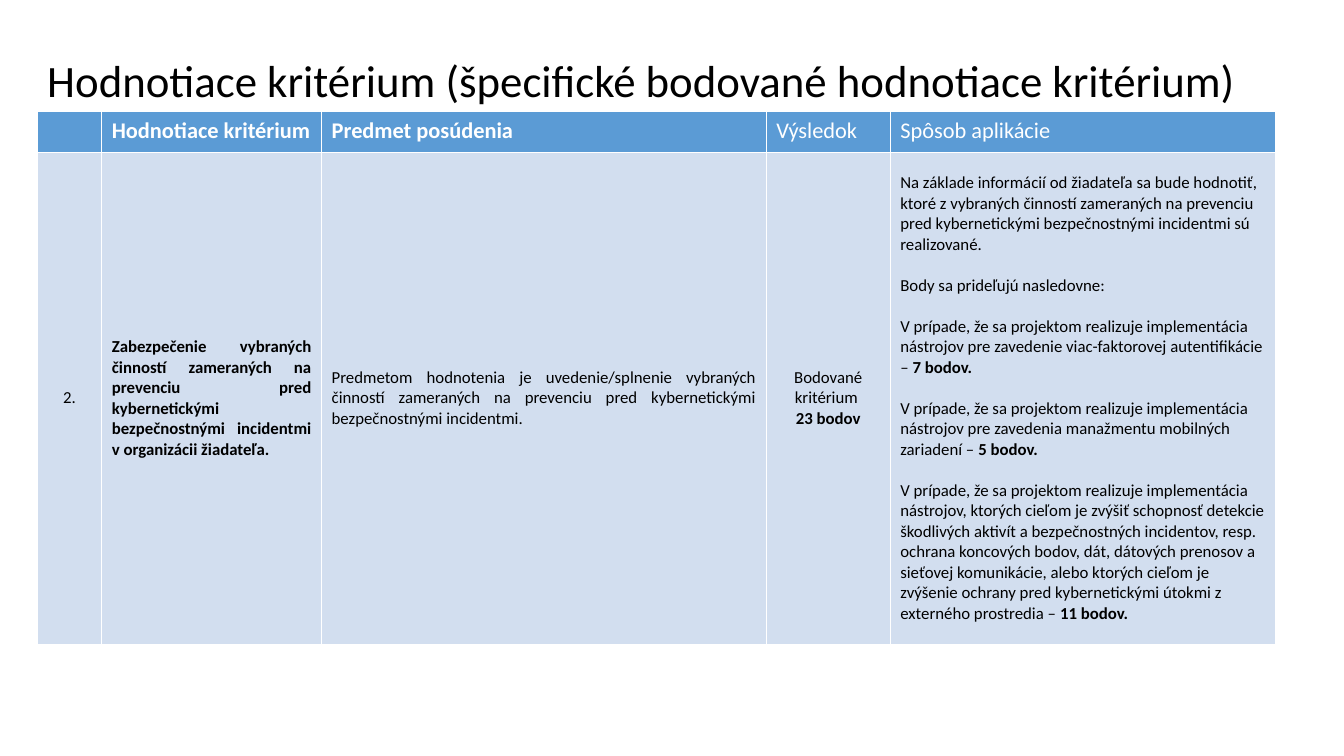
import pptx
import pptx.util
import pptx.dml.color
import pptx.enum.text
import pptx.oxml
import pptx.oxml.ns
from dataclasses import dataclass

Inches = pptx.util.Inches
ALIGN = pptx.enum.text.PP_ALIGN
ANCHOR = pptx.enum.text.MSO_ANCHOR


@dataclass(frozen=True)
class Theme:
    font: str = "Calibri"
    dark: str = "000000"
    light: str = "FFFFFF"
    header_fill: str = "5B9BD5"
    body_fill: str = "D2DEEF"
    title_size: float = 32
    header_size: float = 16
    body_size: float = 12
    paragraph_gap: float = 14.65
    border: float = 1


theme = Theme()


def write_text(frame, paragraphs, size, color, align=ALIGN.LEFT, gap=0, spacing=None):
    for index, spans in enumerate(paragraphs):
        para = frame.paragraphs[0] if index == 0 else frame.add_paragraph()
        para.alignment = align
        para.line_spacing = spacing
        para.space_before = pptx.util.Pt(gap if index else 0)
        for text, bold in spans:
            span = para.add_run()
            span.text = text
            span.font.name = theme.font
            span.font.size = pptx.util.Pt(size)
            span.font.bold = bold
            span.font.color.rgb = pptx.dml.color.RGBColor.from_string(color)


def style_cell(cell, fill):
    properties = cell._tc.get_or_add_tcPr()
    namespace = pptx.oxml.ns.nsdecls("a")
    for side in ("lnL", "lnR", "lnT", "lnB"):
        properties.append(pptx.oxml.parse_xml(
            f'<a:{side} {namespace} w="{pptx.util.Pt(theme.border)}"><a:solidFill>'
            f'<a:srgbClr val="{theme.light}"/></a:solidFill></a:{side}>'))
    cell.fill.solid()
    cell.fill.fore_color.rgb = pptx.dml.color.RGBColor.from_string(fill)


deck = pptx.Presentation()
deck.slide_width = Inches(13.33)
deck.slide_height = Inches(7.5)
page = deck.slides.add_slide(deck.slide_layouts[6])

title_box = page.shapes.add_textbox(Inches(0.37), Inches(0.29), Inches(12.29), Inches(0.82))
title_box.text_frame.word_wrap = True
title_box.text_frame.vertical_anchor = ANCHOR.BOTTOM
write_text(title_box.text_frame,
           [[("Hodnotiace kritérium (špecifické bodované hodnotiace kritérium)", False)]],
           theme.title_size, theme.dark, spacing=0.9)

column_widths = [0.64, 2.18, 4.41, 1.23, 3.82]
row_heights = [0.4, 4.88]
headers = [
    ("", False),
    ("Hodnotiace kritérium", True),
    ("Predmet posúdenia", True),
    ("Výsledok", False),
    ("Spôsob aplikácie", False),
]
scoring = [
    [("Na základe informácií od žiadateľa sa bude hodnotiť, ktoré z vybraných činností "
      "zameraných na prevenciu pred kybernetickými bezpečnostnými incidentmi sú realizované.", False)],
    [("Body sa prideľujú nasledovne:", False)],
    [("V prípade, že sa projektom realizuje implementácia nástrojov pre zavedenie "
      "viac-faktorovej autentifikácie – ", False), ("7 bodov.", True)],
    [("V prípade, že sa projektom realizuje implementácia nástrojov pre zavedenia "
      "manažmentu mobilných zariadení – ", False), ("5 bodov.", True)],
    [("V prípade, že sa projektom realizuje implementácia nástrojov, ktorých cieľom je zvýšiť "
      "schopnosť detekcie škodlivých aktivít a bezpečnostných incidentov, resp. ochrana koncových "
      "bodov, dát, dátových prenosov a sieťovej komunikácie, alebo ktorých cieľom je zvýšenie "
      "ochrany pred kybernetickými útokmi z externého prostredia – ", False), ("11 bodov.", True)],
]
criterion = [
    ([[("2.", False)]], ALIGN.CENTER, 0),
    ([[("Zabezpečenie vybraných činností zameraných na prevenciu pred kybernetickými "
        "bezpečnostnými incidentmi v organizácii žiadateľa. ", True)]], ALIGN.JUSTIFY, 0),
    ([[("Predmetom hodnotenia je uvedenie/splnenie vybraných činností zameraných na prevenciu "
        "pred kybernetickými bezpečnostnými incidentmi.", False)]], ALIGN.JUSTIFY, 0),
    ([[("Bodované kritérium ", False)], [("23 bodov", True)]], ALIGN.CENTER, 0),
    (scoring, ALIGN.LEFT, theme.paragraph_gap),
]

table = page.shapes.add_table(len(row_heights), len(column_widths), Inches(0.37), Inches(1.11),
                              Inches(sum(column_widths)), Inches(sum(row_heights))).table
for column, width in zip(table.columns, column_widths):
    column.width = Inches(width)
for row, height in zip(table.rows, row_heights):
    row.height = Inches(height)

for index, header in enumerate(headers):
    cell = table.cell(0, index)
    style_cell(cell, theme.header_fill)
    if header[0]:
        write_text(cell.text_frame, [[header]], theme.header_size, theme.light)

for index, (paragraphs, align, gap) in enumerate(criterion):
    cell = table.cell(1, index)
    style_cell(cell, theme.body_fill)
    cell.vertical_anchor = ANCHOR.MIDDLE
    write_text(cell.text_frame, paragraphs, theme.body_size, theme.dark, align=align, gap=gap)

deck.save("out.pptx")
